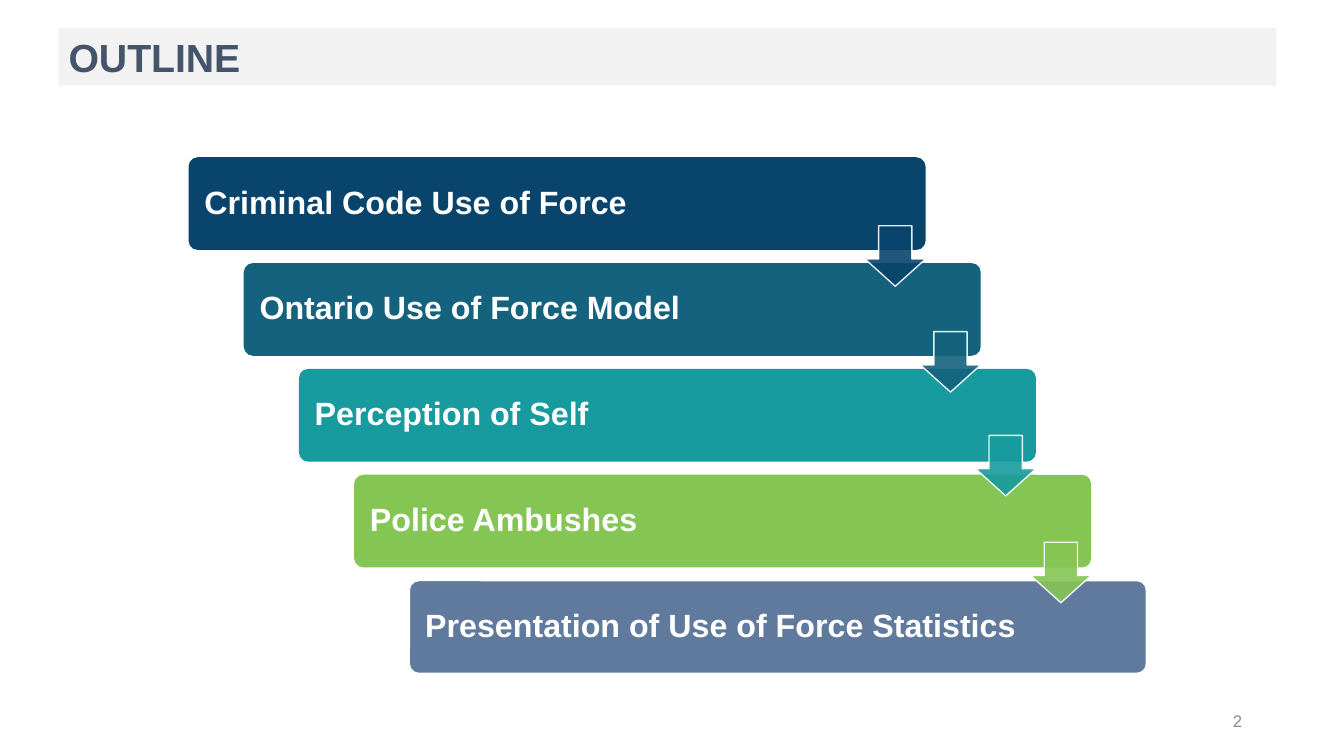
from lxml import etree
from pptx import Presentation
from pptx import util as u
from pptx.dml.color import RGBColor
from pptx.enum import shapes, text
from pptx.oxml.ns import qn

PX = 9144
FONT = "Arial"
COLORS = {
    "navy": "08446B",
    "petrol": "14627E",
    "teal": "179B9E",
    "green": "85C554",
    "slate": "5F7A9C",
    "white": "FFFFFF",
    "band": "F2F2F2",
    "heading": "44546A",
    "number": "8C8C8C",
}
TOPICS = [
    ("Criminal Code Use of Force", "navy", 224),
    ("Ontario Use of Force Model", "petrol", 329),
    ("Perception of Self", "teal", 432),
    ("Police Ambushes", "green", 538),
    ("Presentation of Use of Force Statistics", "slate", None),
]
FIRST_LEFT, FIRST_TOP = 187, 156
STEP_X, STEP_Y = 54.75, 105
BAR_WIDTH, BAR_HEIGHT = 731, 92
ARROW_SIZE = 60


def px(length):
    return u.Emu(round(length * PX))


def rgb(name):
    return RGBColor.from_string(COLORS[name])


def place(part, left, top, width, height):
    part.left, part.top = px(left), px(top)
    part.width, part.height = px(width), px(height)


def write(frame, words, size, color, bold=False, align=text.PP_ALIGN.LEFT):
    frame.text = words
    frame.word_wrap = True
    frame.auto_size = text.MSO_AUTO_SIZE.NONE
    frame.vertical_anchor = text.MSO_ANCHOR.MIDDLE
    paragraph = frame.paragraphs[0]
    paragraph.alignment = align
    font = paragraph.runs[0].font
    font.name, font.size, font.bold = FONT, u.Pt(size), bold
    font.color.rgb = rgb(color)


def add_filled(slide, kind, box, color, adjustments):
    part = slide.shapes.add_shape(kind, *map(px, box))
    part.shadow.inherit = False
    part.fill.solid()
    part.fill.fore_color.rgb = rgb(color)
    part.line.fill.background()
    for index, value in enumerate(adjustments):
        part.adjustments[index] = value
    return part


def outline_white(part):
    part.line.color.rgb = rgb("white")
    part.line.width = u.Pt(1)


def add_heading(slide, words):
    heading = slide.shapes.title
    place(heading, 58, 28, 1208, 57)
    heading.fill.solid()
    heading.fill.fore_color.rgb = rgb("band")
    write(heading.text_frame, words, 28, "heading", bold=True)


def add_topic(slide, left, top, words, color):
    bar = add_filled(slide, shapes.MSO_SHAPE.ROUNDED_RECTANGLE,
                     (left, top, BAR_WIDTH, BAR_HEIGHT), color, [0.1])
    frame = bar.text_frame
    write(frame, words, 23, "white", bold=True)
    frame.margin_left = px(13)
    frame.paragraphs[0].line_spacing = 0.9
    return bar


def add_step_arrow(slide, left, top, color):
    arrow = add_filled(slide, shapes.MSO_SHAPE.DOWN_ARROW,
                       (left, top, ARROW_SIZE, ARROW_SIZE), color, [0.55, 0.45])
    outline_white(arrow)
    for tint in arrow.element.spPr.iter(qn("a:srgbClr")):
        etree.SubElement(tint, qn("a:alpha")).set("val", "90000")


def add_page_number(slide, number):
    corner = slide.shapes.add_textbox(px(942), px(695), px(300), px(40))
    write(corner.text_frame, number, 12, "number", align=text.PP_ALIGN.RIGHT)


def main():
    deck = Presentation()
    deck.slide_width, deck.slide_height = px(1333), px(750)
    slide = deck.slides.add_slide(deck.slide_layouts[5])
    add_heading(slide, "OUTLINE")

    lefts = [FIRST_LEFT + step * STEP_X for step in range(len(TOPICS))]
    for step, (words, color, _) in enumerate(TOPICS):
        bar = add_topic(slide, lefts[step], FIRST_TOP + step * STEP_Y, words, color)
    outline_white(bar)

    for left, (_, color, arrow_top) in zip(lefts, TOPICS[:-1]):
        add_step_arrow(slide, left + BAR_WIDTH - ARROW_SIZE, arrow_top, color)

    add_page_number(slide, "2")
    deck.save("out.pptx")


if __name__ == "__main__":
    main()
